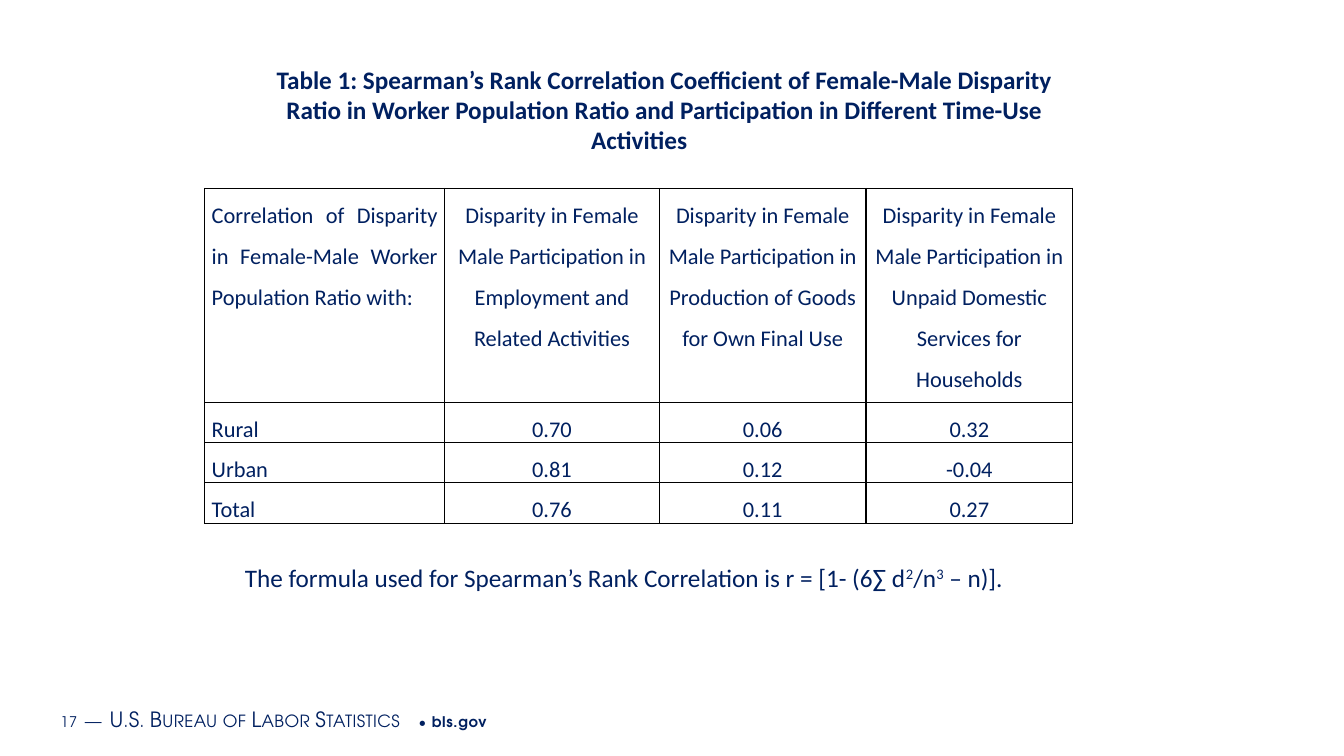
from dataclasses import dataclass

from lxml import etree
from pptx import Presentation
from pptx.dml.color import RGBColor
from pptx.enum.text import MSO_ANCHOR, PP_ALIGN
from pptx.oxml.ns import qn
from pptx.util import Inches, Pt

CENTER, JUSTIFY = PP_ALIGN.CENTER, PP_ALIGN.JUSTIFY
MIDDLE = MSO_ANCHOR.MIDDLE


@dataclass(frozen=True)
class Theme:
    navy: RGBColor = RGBColor(0x00, 0x20, 0x60)
    rule: str = "000000"
    body_font: str = "Calibri"
    footer_font: str = "TeX Gyre Adventor"
    text_size: float = 18
    table_size: float = 16
    footer_size: float = 10.5
    agency_size: float = 15
    gap_size: float = 16


THEME = Theme()


def add_run(paragraph, text, size, font=THEME.body_font, bold=False, **attributes):
    run = paragraph.add_run()
    run.text = text
    run.font.size = Pt(size)
    run.font.name = font
    run.font.bold = bold
    run.font.color.rgb = THEME.navy
    for key, value in attributes.items():
        run.font._element.set(key, value)


def add_text_frame(left, top, width, height):
    box = slide.shapes.add_textbox(Inches(left), Inches(top), Inches(width), Inches(height))
    box.text_frame.word_wrap = True
    return box.text_frame


prs = Presentation()
prs.slide_width, prs.slide_height = Inches(13.33), Inches(7.5)
slide = prs.slides.add_slide(prs.slide_layouts[6])

# Footer
footer = add_text_frame(0.53, 6.93, 8.47, 0.4)
footer.vertical_anchor = MIDDLE
footer.margin_left = footer.margin_right = Inches(0.07)
footer.margin_top = footer.margin_bottom = Inches(0.04)
plain = {"spc": "50"}
small_caps = {"spc": "30", "cap": "small"}
for text, size, bold, style in [
    ("17", THEME.footer_size, False, plain),
    (" ", THEME.gap_size, False, plain),
    ("—", THEME.agency_size, False, small_caps),
    (" ", THEME.gap_size, False, plain),
    ("U.S. Bureau of Labor Statistics", THEME.agency_size, False, small_caps),
    (" • ", THEME.footer_size, False, plain),
    ("bls.gov", THEME.footer_size, True, plain),
]:
    add_run(footer.paragraphs[0], text, size, THEME.footer_font, bold, **style)

# Correlation table
correlations = [
    ("Correlation of Disparity in Female-Male Worker Population Ratio with:",
     "Disparity in Female Male Participation in Employment and Related Activities",
     "Disparity in Female Male Participation in Production of Goods for Own Final Use",
     "Disparity in Female Male Participation in Unpaid Domestic Services for Households"),
    ("Rural", "0.70", "0.06", "0.32"),
    ("Urban", "0.81", "0.12", "-0.04"),
    ("Total", "0.76", "0.11", "0.27"),
]
table = slide.shapes.add_table(
    len(correlations), len(correlations[0]),
    Inches(2.03), Inches(1.87), Inches(8.62), Inches(3.3)).table
table.first_row = table.horz_banding = False
for column, width in zip(table.columns, (2.38, 2.13, 2.05, 2.05)):
    column.width = Inches(width)
for row, height in zip(table.rows, (2.12, 0.39, 0.39, 0.39)):
    row.height = Inches(height)

for row_index, entries in enumerate(correlations):
    for column_index, entry in enumerate(entries):
        cell = table.cell(row_index, column_index)
        cell.margin_left = cell.margin_right = Inches(0.07)
        cell.margin_top = cell.margin_bottom = 0
        paragraph = cell.text_frame.paragraphs[0]
        paragraph.alignment = CENTER if column_index else JUSTIFY
        paragraph.line_spacing = 1.5
        paragraph.space_after = Pt(6)
        add_run(paragraph, entry, THEME.table_size)
        # Cell borders go before the fill
        properties = cell._tc.get_or_add_tcPr()
        for side in ("lnL", "lnR", "lnT", "lnB"):
            border = etree.SubElement(properties, qn(f"a:{side}"), w=str(Pt(1)))
            solid = etree.SubElement(border, qn("a:solidFill"))
            etree.SubElement(solid, qn("a:srgbClr"), val=THEME.rule)
        cell.fill.background()

# Table title
title = add_text_frame(2.03, 0.58, 8.62, 1.01)
title.vertical_anchor = MIDDLE
title_lines = [
    "Table 1: Spearman’s Rank Correlation Coefficient of Female-Male Disparity",
    "Ratio in Worker Population Ratio and Participation in Different Time-Use Activities",
]
title.add_paragraph()
for paragraph, line in zip(title.paragraphs, title_lines):
    paragraph.alignment = CENTER
    paragraph._p.get_or_add_pPr().set("indent", str(Inches(0.5)))
    add_run(paragraph, line, THEME.text_size, bold=True)

# Formula
formula = add_text_frame(1.83, 5.53, 9.16, 0.4).paragraphs[0]
formula._p.get_or_add_pPr().set("indent", str(Inches(0.5)))
for text, baseline in [
    ("The formula used for Spearman’s Rank Correlation is r = [1- (6∑ d", "0"),
    ("2", "30000"),
    ("/n", "0"),
    ("3", "30000"),
    (" – n)].", "0"),
]:
    add_run(formula, text, THEME.text_size, baseline=baseline)

prs.save("out.pptx")
